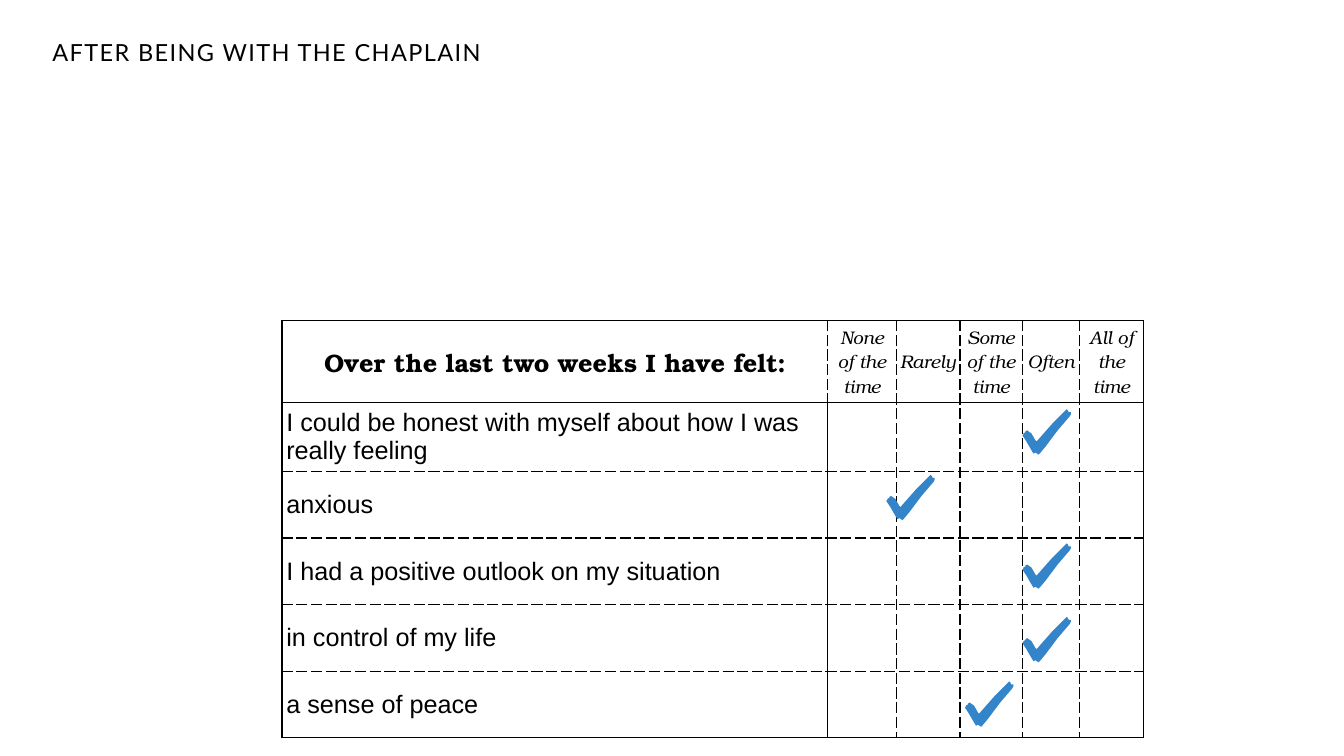
from lxml.etree import SubElement
from pptx import Presentation
from pptx.dml.color import RGBColor
from pptx.enum.text import MSO_ANCHOR as Anchor, PP_ALIGN as Align
from pptx.oxml.ns import qn
from pptx.util import Inches, Pt

TITLE = "AFTER BEING WITH THE CHAPLAIN"
HEADER = ["Over the last two weeks I have felt:", "None of the time", "Rarely",
          "Some of the time", "Often", "All of the time"]
FEELINGS = ["I could be honest with myself about how I was really feeling", "anxious",
            "I had a positive outlook on my situation", "in control of my life",
            "a sense of peace"]
COLS = [5.41, 0.68, 0.63, 0.62, 0.57, 0.63]
ROWS = [0.81, 0.69, 0.66, 0.66, 0.66, 0.66]
TABLE_LEFT, TABLE_TOP = 2.8, 3.18
HEAVY_COLUMN_EDGES, HEAVY_ROW_EDGES = (0, 3), (3,)
TICKS = [(10.14, 4.06), (8.79, 4.71), (10.14, 5.39), (10.14, 6.12), (9.57, 6.76)]
TICK_OUTLINE = [(44, 0), (30, 14), (15, 31), (14, 32), (13, 31), (9, 24), (6, 22), (5, 21),
                (3, 22), (3, 23), (1, 24), (1, 25), (0, 26), (4, 32), (8, 39), (11, 44),
                (13, 43), (16, 45), (18, 43), (23, 37), (35, 21), (47, 7), (48, 5),
                (48, 3), (46, 3), (45, 1)]
COLORS = {"ink": "000000", "tick": "3484C9"}


def add_run(p, text, size, font, bold=False, italic=False):
    r = p.add_run()
    r.text = text
    f = r.font
    f.size, f.name, f.bold, f.italic = Pt(size), font, bold, italic
    f.color.rgb = RGBColor.from_string(COLORS["ink"])
    return r


def border_style(side, row, col):
    if side in "LR":
        edge = col + (side == "R")
        solid = edge in (0, len(COLS)) or (edge == 1 and row > 0)
        heavy = edge in HEAVY_COLUMN_EDGES
    else:
        edge = row + (side == "B")
        solid = edge in (0, 1, len(ROWS))
        heavy = edge in HEAVY_ROW_EDGES
    return 1.5 if heavy else 1, "solid" if solid else "dash"


def add_border(cell, side, width, dash):
    ln = SubElement(cell._tc.get_or_add_tcPr(), qn(f"a:ln{side}"), w=str(Pt(width)))
    fill = SubElement(ln, qn("a:solidFill"))
    SubElement(fill, qn("a:srgbClr"), val=COLORS["ink"])
    SubElement(ln, qn("a:prstDash"), val=dash)


def add_title(slide):
    sp = slide.shapes.title
    sp.left, sp.top, sp.width, sp.height = map(Inches, (0.42, 0.36, 11.46, 0.35))
    tf = sp.text_frame
    tf.vertical_anchor = Anchor.BOTTOM
    p = tf.paragraphs[0]
    p.alignment, p.line_spacing = Align.LEFT, 0.8
    r = add_run(p, TITLE, 16.8, "Lato")
    r._r.get_or_add_rPr().set("spc", "100")


def add_survey(slide):
    frame = slide.shapes.add_table(len(ROWS), len(COLS), Inches(TABLE_LEFT), Inches(TABLE_TOP),
                                   Inches(sum(COLS)), Inches(sum(ROWS)))
    table = frame.table
    table.first_row = table.horz_banding = False
    for col, width in zip(table.columns, COLS):
        col.width = Inches(width)
    for row, height in zip(table.rows, ROWS):
        row.height = Inches(height)
    for i in range(len(ROWS)):
        for j in range(len(COLS)):
            cell = table.cell(i, j)
            cell.vertical_anchor = Anchor.MIDDLE
            cell.margin_left = cell.margin_right = Inches(0.02 if j else 0.04)
            cell.margin_top = cell.margin_bottom = Inches(0.04)
            for side in "LRTB":
                add_border(cell, side, *border_style(side, i, j))
            cell.fill.background()
            p = cell.text_frame.paragraphs[0]
            if i == 0:
                p.alignment = Align.CENTER
                add_run(p, HEADER[j], 13 if j else 18, "TeX Gyre Bonum", j == 0, j > 0)
            elif j == 0:
                add_run(p, FEELINGS[i - 1], 18, "Arial")


def add_tick(slide, left, top):
    points = [(left * 100 + x, top * 100 + y) for x, y in TICK_OUTLINE]
    builder = slide.shapes.build_freeform(*points[0], scale=Inches(0.01))
    builder.add_line_segments(points[1:], close=True)
    sp = builder.convert_to_shape()
    sp.shadow.inherit = False
    sp.fill.solid()
    sp.fill.fore_color.rgb = RGBColor.from_string(COLORS["tick"])
    sp.line.fill.background()


def main():
    prs = Presentation()
    prs.slide_width, prs.slide_height = Inches(13.33), Inches(7.5)
    slide = prs.slides.add_slide(prs.slide_layouts[5])
    add_title(slide)
    add_survey(slide)
    for left, top in TICKS:
        add_tick(slide, left, top)
    prs.save("out.pptx")


if __name__ == "__main__":
    main()
